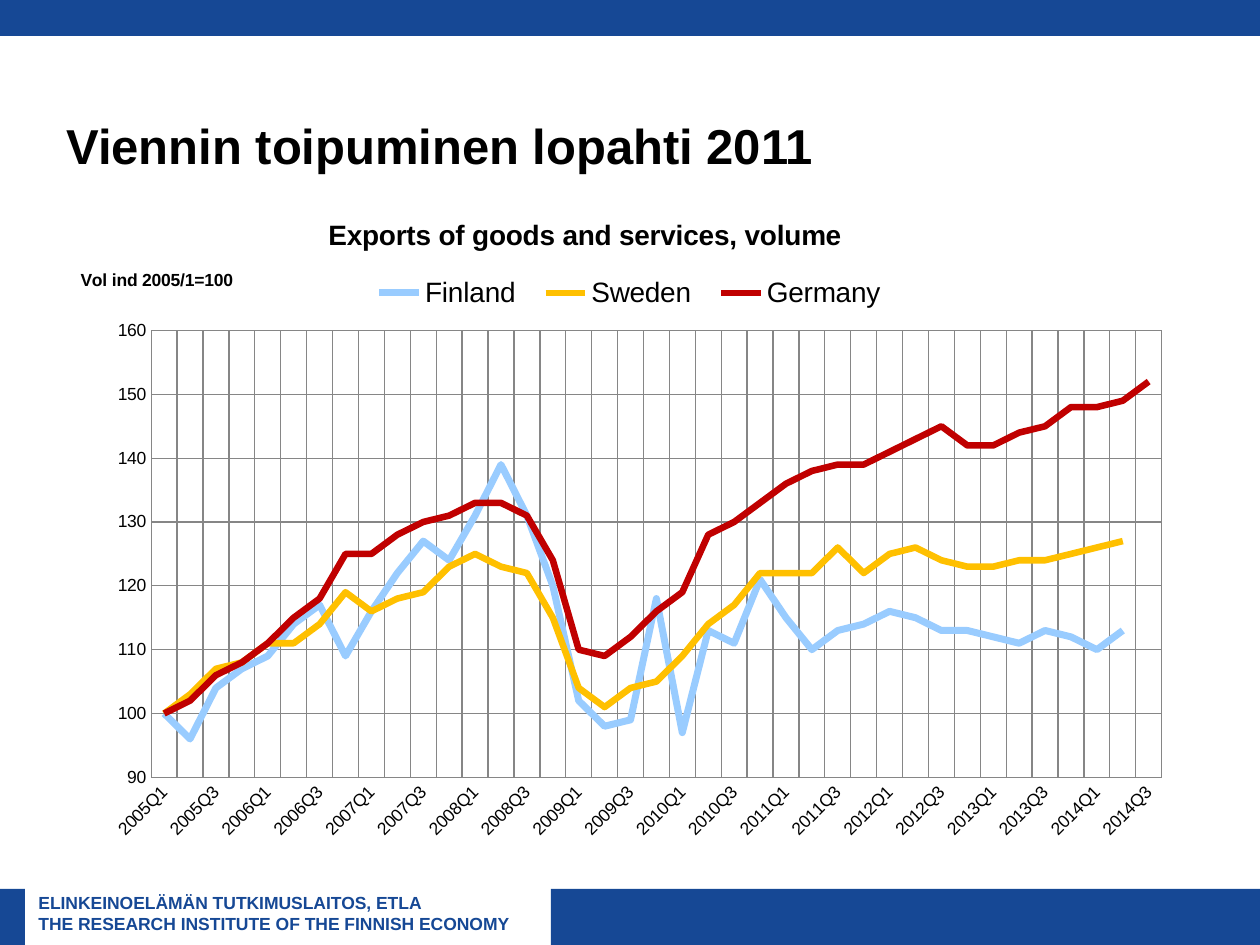
from typing import NamedTuple

from pptx import Presentation
from pptx.chart.data import CategoryChartData as Data
from pptx.dml.color import RGBColor as Rgb
from pptx.enum.chart import XL_CHART_TYPE as Kind, XL_LEGEND_POSITION as Side
from pptx.enum.chart import XL_MARKER_STYLE as Mark, XL_TICK_MARK as Tick
from pptx.enum.shapes import MSO_SHAPE as Form
from pptx.enum.text import MSO_ANCHOR as Anchor
from pptx.oxml import parse_xml
from pptx.oxml.ns import nsdecls
from pptx.util import Pt

SCALE = 914400 / 126  # EMU per px
FONT = "Arial"
HUES = {"blue": "164895", "black": "000000", "grid": "868686",
        "sky": "99CCFF", "gold": "FFC000", "red": "C00000"}


class Box(NamedTuple):
    x: int
    y: int
    w: int
    h: int


class Line(NamedTuple):
    name: str
    hue: str
    vals: list


BARS = [Box(0, 0, 1260, 36), Box(0, 889, 25, 56), Box(551, 889, 709, 56)]
FRAME = Box(54, 185, 1171, 674)
QUARTERS = [f"{year}Q{q}" for year in range(2005, 2015) for q in range(1, 5)][:39]
LINES = [
    Line("Finland", "sky", [
        100, 96, 104, 107, 109, 114, 117, 109, 116, 122, 127, 124, 131,
        139, 131, 120, 102, 98, 99, 118, 97, 113, 111, 121, 115, 110,
        113, 114, 116, 115, 113, 113, 112, 111, 113, 112, 110, 113, None]),
    Line("Sweden", "gold", [
        100, 103, 107, 108, 111, 111, 114, 119, 116, 118, 119, 123, 125,
        123, 122, 115, 104, 101, 104, 105, 109, 114, 117, 122, 122, 122,
        126, 122, 125, 126, 124, 123, 123, 124, 124, 125, 126, 127, None]),
    Line("Germany ", "red", [
        100, 102, 106, 108, 111, 115, 118, 125, 125, 128, 130, 131, 133,
        133, 131, 124, 110, 109, 112, 116, 119, 128, 130, 133, 136, 138,
        139, 139, 141, 143, 145, 142, 142, 144, 145, 148, 148, 149, 152]),
]


def emu(box: Box) -> list[int]:
    return [round(n * SCALE) for n in box]


def style(font, size: int, hue: str = "black", bold: bool = False) -> None:
    font.name, font.size, font.bold = FONT, Pt(size), bold
    font.color.rgb = Rgb.from_string(HUES[hue])


def write(frame, text: str, *, size: int, hue: str = "black",
          bold: bool = True, anchor=None) -> None:
    """Fill a text frame, one paragraph per line of text."""
    frame.text = text
    if anchor is not None:
        frame.vertical_anchor = anchor
    for para in frame.paragraphs:
        for run in para.runs:
            style(run.font, size, hue, bold)


def label(slide, box: Box, text: str, **fmt) -> None:
    frame = slide.shapes.add_textbox(*emu(box)).text_frame
    frame.word_wrap = True
    write(frame, text, **fmt)


def bar(slide, box: Box) -> None:
    shape = slide.shapes.add_shape(Form.RECTANGLE, *emu(box))
    shape.shadow.inherit = False
    shape.fill.solid()
    shape.fill.fore_color.rgb = Rgb.from_string(HUES["blue"])
    shape.line.fill.background()


def tag(name: str, val) -> str:
    return f'<c:{name} val="{val}"/>'


def place(node, after: str | None, x: float, y: float,
          w: float = 0, h: float = 0, inner: bool = False) -> None:
    """Give a chart part a manual layout, in shares of the chart frame."""
    for old in node.xpath("c:layout"):
        node.remove(old)
    body = tag("layoutTarget", "inner") if inner else ""
    body += tag("xMode", "edge") + tag("yMode", "edge")
    body += tag("x", x) + tag("y", y)
    if w:
        body += tag("w", w) + tag("h", h)
    new = parse_xml(f'<c:layout {nsdecls("c")}><c:manualLayout>{body}'
                    '</c:manualLayout></c:layout>')
    if after:
        node.xpath(after)[0].addnext(new)
    else:
        node.insert(0, new)


def draw(slide) -> None:
    data = Data(number_format="0")
    data.categories = QUARTERS
    for line in LINES:
        data.add_series(line.name, line.vals)
    chart = slide.shapes.add_chart(Kind.LINE, *emu(FRAME), data).chart
    root = chart.element
    style(chart.font, 10)

    # Lines
    plot = chart.plots[0]
    plot.vary_by_categories = False
    for item, line in zip(plot.series, LINES):
        item.smooth = False
        item.marker.style = Mark.NONE
        item.format.line.width = Pt(4 if line.hue == "sky" else 3.75)
        item.format.line.color.rgb = Rgb.from_string(HUES[line.hue])

    # Axes
    cat, val = chart.category_axis, chart.value_axis
    for axis in (cat, val):
        axis.has_major_gridlines = True
        axis.major_tick_mark = Tick.INSIDE
        style(axis.tick_labels.font, 10)
        for part in (axis, axis.major_gridlines):
            part.format.line.width = Pt(0.75)
            part.format.line.color.rgb = Rgb.from_string(HUES["grid"])
    val.minimum_scale, val.maximum_scale, val.major_unit = 90, 160, 10
    root.xpath(".//c:catAx/c:txPr/a:bodyPr")[0].set("rot", "-2700000")
    last = root.xpath(".//c:catAx/c:noMultiLvlLbl")[0]
    for name, skip in (("tickLblSkip", 2), ("tickMarkSkip", 1)):
        last.addprevious(parse_xml(f'<c:{name} {nsdecls("c")} val="{skip}"/>'))

    # Titles and legend
    write(chart.chart_title.text_frame,
          "Exports of goods and services, volume", size=16)
    write(val.axis_title.text_frame, "Vol ind 2005/1=100", size=10)
    root.xpath(".//c:valAx/c:title//a:bodyPr")[0].set("rot", "0")
    root.xpath("c:chart/c:title/c:overlay")[0].set("val", "1")
    chart.has_legend = True
    chart.legend.position = Side.TOP
    chart.legend.include_in_layout = False
    style(chart.legend.font, 16)

    # Layout of the parts
    place(root.xpath("c:chart/c:title")[0], "c:tx", 0.23, 0.04)
    place(root.xpath(".//c:valAx/c:title")[0], "c:tx", 0.02, 0.12)
    place(root.xpath(".//c:legend")[0], "c:legendPos", 0.26, 0.12, 0.47, 0.08)
    place(root.xpath(".//c:plotArea")[0], None, 0.083, 0.216, 0.863, 0.663, True)


def main() -> None:
    deck = Presentation()
    deck.slide_width, deck.slide_height = emu(Box(0, 0, 1260, 945))[2:]
    slide = deck.slides.add_slide(deck.slide_layouts[6])

    # Bands and footer
    for box in BARS:
        bar(slide, box)
    label(slide, Box(26, 886, 525, 54),
          "ELINKEINOELÄMÄN TUTKIMUSLAITOS, ETLA\n"
          "THE RESEARCH INSTITUTE OF THE FINNISH ECONOMY",
          size=10, hue="blue")

    # Heading and chart
    label(slide, Box(54, 66, 1152, 158), "Viennin toipuminen lopahti 2011",
          size=28, anchor=Anchor.MIDDLE)
    draw(slide)
    deck.save("out.pptx")


if __name__ == "__main__":
    main()
